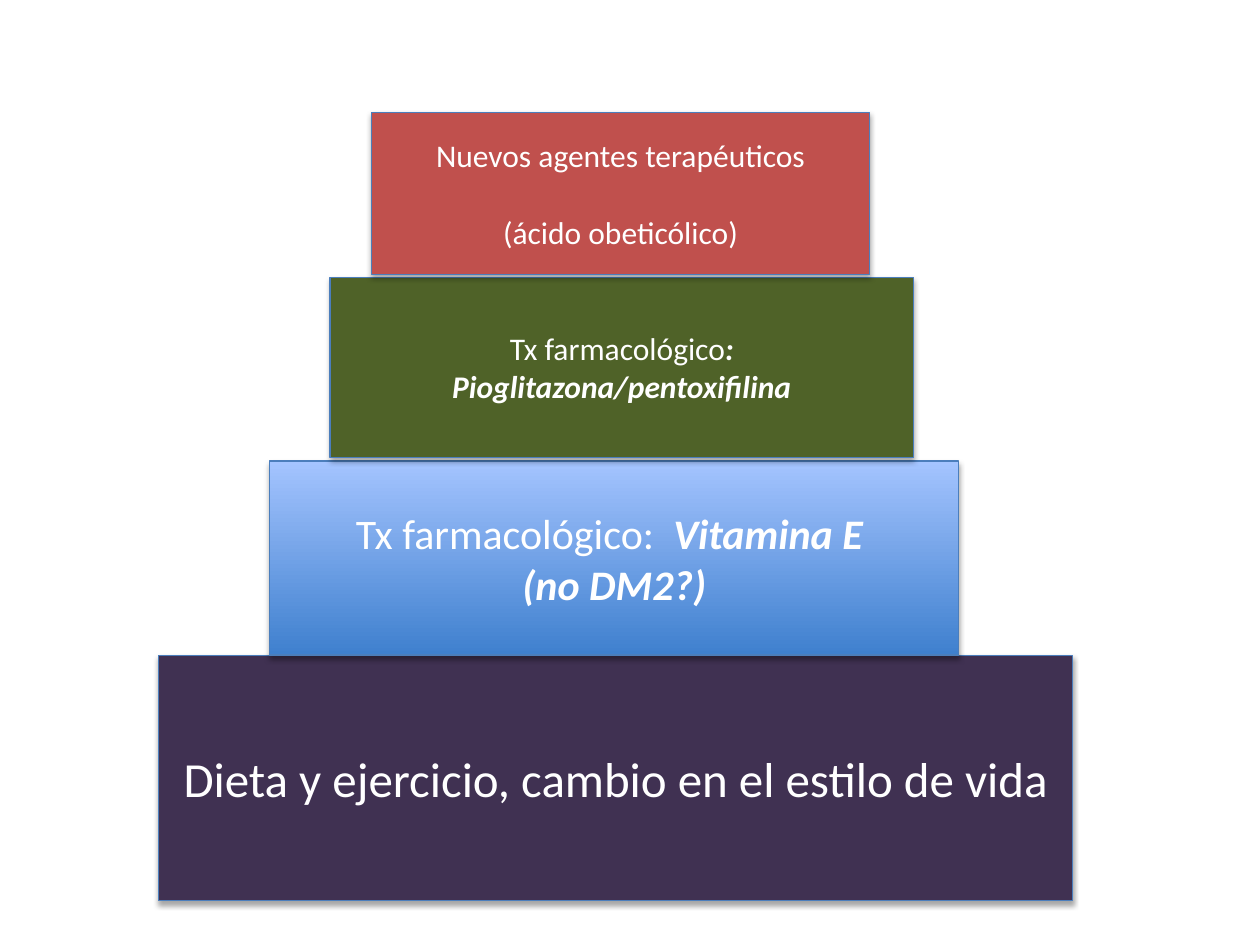
from lxml.etree import SubElement
from pptx import Presentation
from pptx.dml.color import RGBColor
from pptx.enum.shapes import MSO_SHAPE
from pptx.enum.text import MSO_ANCHOR, PP_ALIGN
from pptx.oxml.ns import qn
from pptx.util import Inches, Pt


def tint(code):
    return RGBColor.from_string(code)


def write(para, text, size=18, strong=False, font="Calibri", color="FFFFFF"):
    """Add a run; strong means bold and italic."""
    run = para.add_run()
    run.text = text
    run.font.size = Pt(size)
    run.font.name = font
    run.font.bold = run.font.italic = strong
    run.font.color.rgb = tint(color)


class Deck:
    edge = "4B7EBC"

    def __init__(self):
        self.show = Presentation()
        self.show.slide_width = Inches(10)
        self.show.slide_height = Inches(7.5)
        self.slide = self.show.slides.add_slide(self.show.slide_layouts[6])

    def shade(self, shape):
        """Give the shape a soft shadow below it."""
        shape.shadow.inherit = False
        effects = shape._element.spPr.find(qn("a:effectLst"))
        outer = SubElement(effects, qn("a:outerShdw"), blurRad=str(Pt(3.1)),
                           dist=str(Pt(1.8)), dir="5400000", rotWithShape="0")
        black = SubElement(outer, qn("a:srgbClr"), val="000000")
        SubElement(black, qn("a:alpha"), val="35000")

    def step(self, box, fills, lines, size, gap=0):
        """Add a block; two fills blend from bottom to top."""
        shape = self.slide.shapes.add_shape(
            MSO_SHAPE.RECTANGLE, *[Inches(n) for n in box])
        if len(fills) > 1:
            shape.fill.gradient()
            shape.fill.gradient_angle = 90
            for stop, code in zip(shape.fill.gradient_stops, fills):
                stop.color.rgb = tint(code)
        else:
            shape.fill.solid()
            shape.fill.fore_color.rgb = tint(fills[0])
        shape.line.color.rgb = tint(self.edge)
        shape.line.width = Pt(0.75)
        self.shade(shape)

        frame = shape.text_frame
        frame.word_wrap = True
        frame.vertical_anchor = MSO_ANCHOR.MIDDLE
        for i, line in enumerate(lines):
            para = frame.add_paragraph() if i else frame.paragraphs[0]
            para.alignment = PP_ALIGN.CENTER
            if i:
                para.space_before = Pt(gap)
            for text, strong in line:
                write(para, text, size=size, strong=strong)


def main():
    deck = Deck()
    deck.step((1.26, 5.2, 7.25, 1.95), ["403152"],
              [[("Dieta y ejercicio, cambio en el estilo de vida", False)]], 28)
    deck.step((2.14, 3.66, 5.47, 1.54), ["3F80CE", "A4C4FF"],
              [[("Tx farmacológico:  ", False), ("Vitamina E ", True)],
               [("(no DM2?)", True)]], 24)
    deck.step((2.62, 2.2, 4.63, 1.43), ["4F6228"],
              [[("Tx farmacológico", False),
                (": Pioglitazona/pentoxifilina", True)]], 18)
    deck.step((2.95, 0.89, 3.95, 1.29), ["C0504D"],
              [[("Nuevos agentes terapéuticos", False)],
               [("(ácido obeticólico)", False)]], 18, gap=22)
    deck.show.save("out.pptx")


if __name__ == "__main__":
    main()
